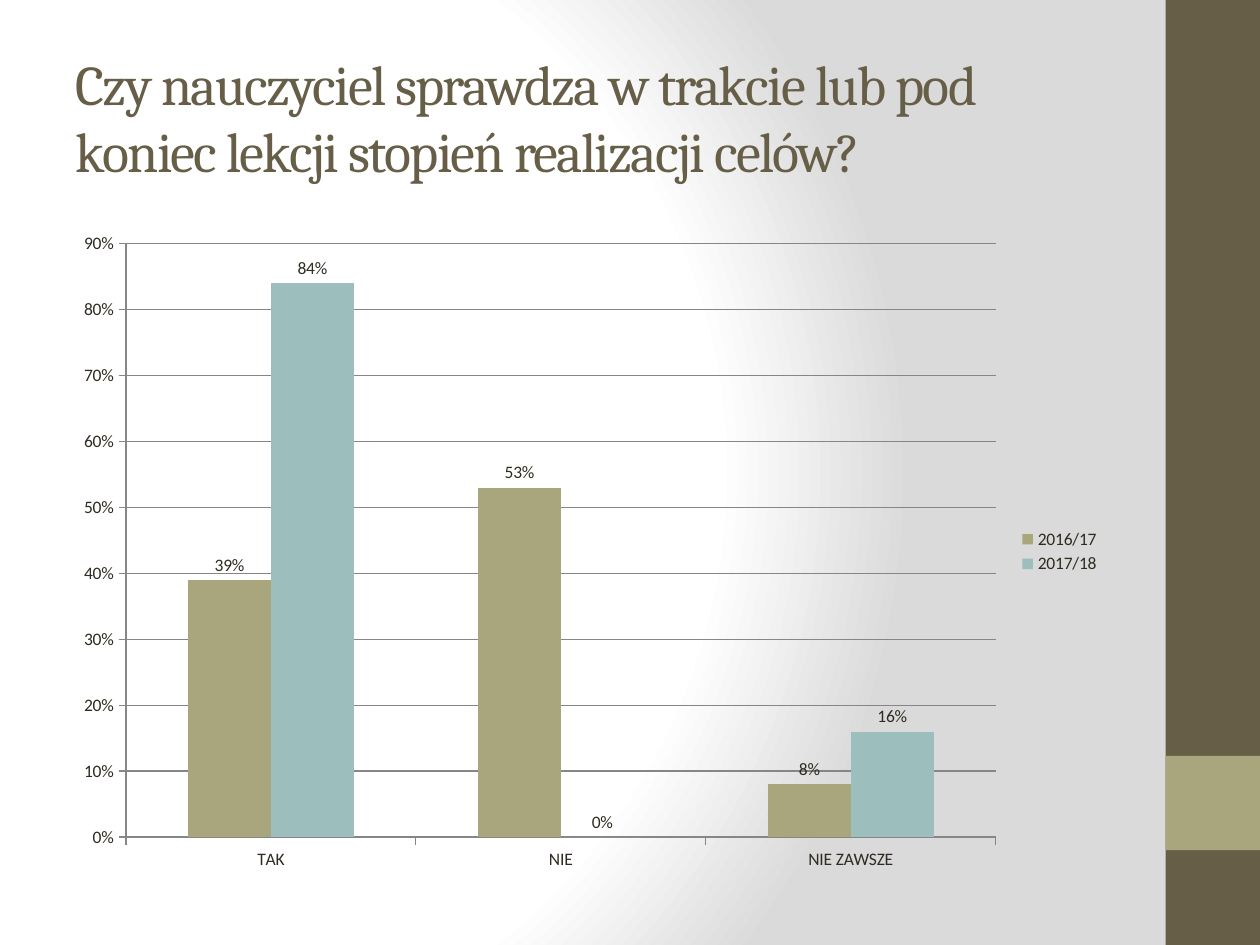
from lxml import etree
from pptx import Presentation
from pptx.chart.data import CategoryChartData
from pptx.dml.color import RGBColor
from pptx.enum.chart import (XL_CHART_TYPE, XL_LABEL_POSITION,
                             XL_LEGEND_POSITION, XL_TICK_MARK)
from pptx.enum.text import MSO_ANCHOR, MSO_AUTO_SIZE, PP_ALIGN
from pptx.oxml import parse_xml
from pptx.oxml.ns import nsdecls, qn
from pptx.util import Cm, Pt

BROWN = RGBColor(0x67, 0x5E, 0x47)
OLIVE = RGBColor(0xA9, 0xA5, 0x7C)
TEAL = RGBColor(0x9C, 0xBE, 0xBD)
DARK = RGBColor(0x2F, 0x2B, 0x20)
GRID = RGBColor(0x86, 0x86, 0x86)
WHITE = RGBColor(0xFF, 0xFF, 0xFF)
GREY = RGBColor(0xDA, 0xDA, 0xDA)

QUESTION = ("Czy nauczyciel sprawdza w trakcie lub pod koniec lekcji "
            "stopień realizacji celów?")
ANSWERS = ["TAK", "NIE", "NIE ZAWSZE"]
SCHOOL_YEARS = [
    ("2016/17", [0.39, 0.53, 0.08], OLIVE),
    ("2017/18", [0.84, 0, 0.16], TEAL),
]


def paint_background(slide):
    """Radial glow, white on the left and grey on the right."""
    slide.background.fill.solid()
    plain_fill = slide.element.find(".//" + qn("p:bgPr") + "/" + qn("a:solidFill"))
    stops = "".join(
        f'<a:gs pos="{percent * 1000}"><a:srgbClr val="{color}"/></a:gs>'
        for percent, color in [(0, WHITE), (75, WHITE), (100, GREY)])
    glow = parse_xml(
        f'<a:gradFill {nsdecls("a")} rotWithShape="1"><a:gsLst>{stops}</a:gsLst>'
        '<a:path path="circle">'
        '<a:fillToRect l="20000" t="50000" r="100000" b="50000"/>'
        '</a:path></a:gradFill>')
    plain_fill.getparent().replace(plain_fill, glow)


def add_side_band(slide, left, top, width, height):
    """Brown band with a square olive accent four fifths of the way down."""
    parts = [(top, height, BROWN), (top + int(height * 0.8), width, OLIVE)]
    for part_top, part_height, color in parts:
        block = slide.shapes.add_shape(1, left, part_top, width, part_height)
        block.shadow.inherit = False
        block.fill.solid()
        block.fill.fore_color.rgb = color
        block.line.fill.background()


def fill_title(slide, left, top, width, height):
    heading = slide.shapes.title
    heading.left, heading.top, heading.width, heading.height = left, top, width, height
    frame = heading.text_frame
    frame.word_wrap = True
    frame.auto_size = MSO_AUTO_SIZE.NONE
    frame.vertical_anchor = MSO_ANCHOR.MIDDLE
    paragraph = frame.paragraphs[0]
    paragraph.alignment = PP_ALIGN.LEFT
    question = paragraph.add_run()
    question.text = QUESTION
    question.font.name = "Cambria"
    question.font.size = Pt(32)
    question.font.color.rgb = BROWN
    question.font._element.set("spc", "-100")  # tighter letters


def style_axis(axis):
    axis.major_tick_mark = XL_TICK_MARK.OUTSIDE
    axis.minor_tick_mark = XL_TICK_MARK.NONE
    axis.format.line.color.rgb = GRID
    axis.format.line.width = Pt(0.75)


def add_answer_chart(slide, left, top, width, height):
    answers = CategoryChartData(number_format="0%")
    answers.categories = ANSWERS
    for year, shares, _ in SCHOOL_YEARS:
        answers.add_series(year, shares)
    chart = slide.shapes.add_chart(XL_CHART_TYPE.COLUMN_CLUSTERED,
                                   left, top, width, height, answers).chart
    chart.has_title = False
    chart.font.name = "Calibri"
    chart.font.size = Pt(10)
    chart.font.color.rgb = DARK

    # Legend
    chart.has_legend = True
    chart.legend.position = XL_LEGEND_POSITION.RIGHT
    chart.legend.include_in_layout = False

    # Axes
    style_axis(chart.category_axis)
    share_axis = chart.value_axis
    style_axis(share_axis)
    share_axis.minimum_scale, share_axis.maximum_scale = 0, 0.9
    share_axis.major_unit = 0.1
    share_axis.tick_labels.number_format = "0%"
    share_axis.tick_labels.number_format_is_linked = False
    share_axis.has_major_gridlines = True
    share_axis.major_gridlines.format.line.color.rgb = GRID
    share_axis.major_gridlines.format.line.width = Pt(0.75)

    # Columns and their labels
    columns = chart.plots[0]
    columns.gap_width = 150
    columns.overlap = 0
    columns.vary_by_categories = False
    for column, (_, _, color) in zip(columns.series, SCHOOL_YEARS):
        column.invert_if_negative = False
        column.format.fill.solid()
        column.format.fill.fore_color.rgb = color
        labels = column.data_labels
        labels.show_value = True
        labels.number_format = "0%"
        labels.number_format_is_linked = False
        labels.position = XL_LABEL_POSITION.OUTSIDE_END


def main():
    deck = Presentation()
    deck.slide_width, deck.slide_height = Cm(25.4), Cm(19.05)
    slide = deck.slides.add_slide(deck.slide_layouts[5])
    margin, content_width = Cm(1.27), Cm(21.16)
    paint_background(slide)
    add_side_band(slide, Cm(23.5), 0, Cm(1.9), deck.slide_height)
    fill_title(slide, margin, Cm(0.76), content_width, Cm(3.18))
    add_answer_chart(slide, margin, Cm(4.45), content_width, Cm(13.34))
    deck.save("out.pptx")


if __name__ == "__main__":
    main()
